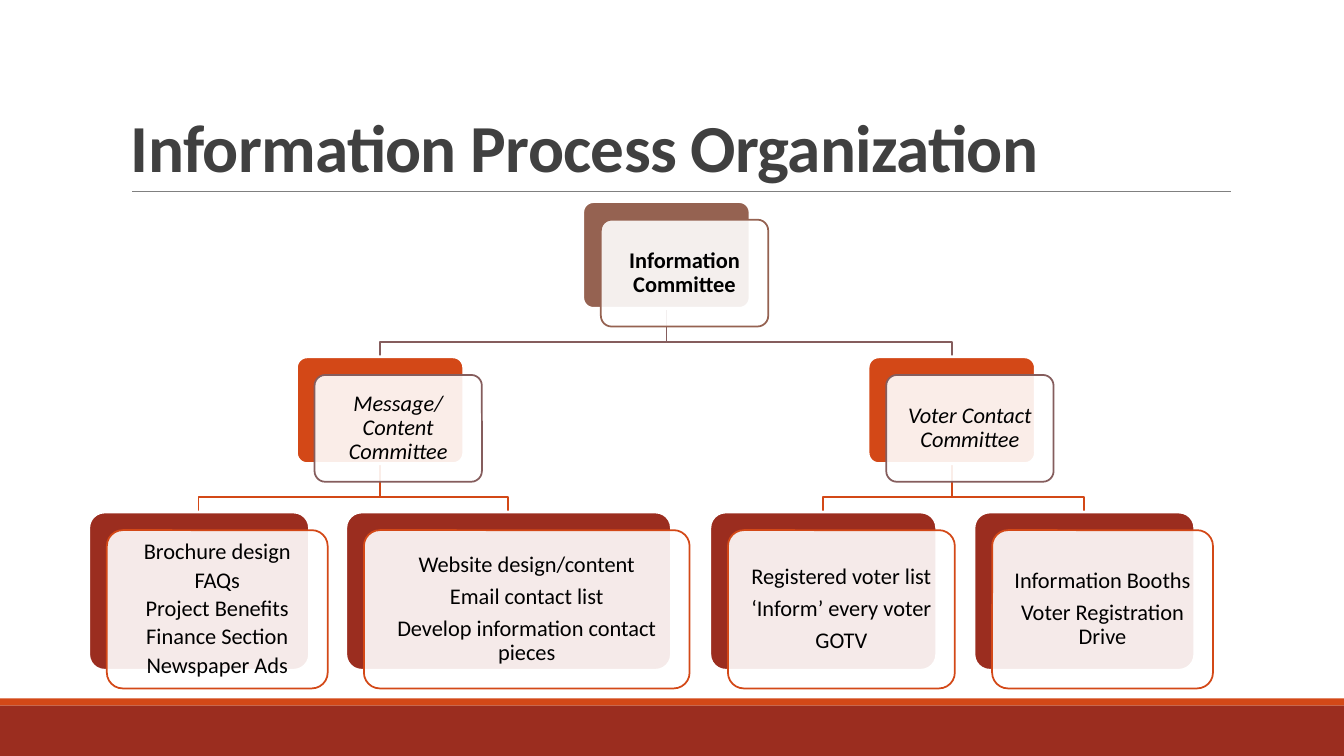
"""Builds the Information Process Organization chart slide."""
from lxml import etree
from pptx import Presentation, util as u
from pptx.dml.color import RGBColor
from pptx.enum import shapes, text
from pptx.oxml import ns

COLORS = {"title": "404040", "text": "000000", "white": "FFFFFF", "rule": "808080",
          "brown": "956251", "mauve": "855D5D", "orange": "D34817", "red": "9B2D1F"}
ROUND = shapes.MSO_SHAPE.ROUNDED_RECTANGLE


class OrgSlide:
    """Style and drawing methods for one slide, in hundredths of an inch."""
    SCALE = 9144
    FONT = "Calibri"
    OFFSET = 18
    BEND = 15

    def __init__(self, prs):
        self.s = prs.slides.add_slide(prs.slide_layouts[6])

    def px(self, *values):
        return [u.Emu(v * self.SCALE) for v in values]

    def color(self, name):
        return RGBColor.from_string(COLORS[name])

    def stroke(self, sp, color, width):
        sp.line.color.rgb = self.color(color)
        sp.line.width = u.Pt(width)

    def shape(self, kind, box, fill, line=None, width=1.25, alpha=None):
        sp = self.s.shapes.add_shape(kind, *self.px(*box))
        sp.shadow.inherit = False
        sp.fill.solid()
        sp.fill.fore_color.rgb = self.color(fill)
        if alpha:
            clr = sp.fill._xPr.find(".//" + ns.qn("a:srgbClr"))
            etree.SubElement(clr, ns.qn("a:alpha")).set("val", str(alpha * 1000))
        if line:
            self.stroke(sp, line, width)
        else:
            sp.line.fill.background()
        if kind == ROUND:
            sp.adjustments[0] = 0.1
        return sp

    def run(self, p, words, size, color, bold=False, italic=False):
        r = p.add_run()
        r.text = words
        r.font.name, r.font.size = self.FONT, u.Pt(size)
        r.font.bold, r.font.italic = bold, italic
        r.font.color.rgb = self.color(color)
        return r

    def title(self, words, box):
        tf = self.s.shapes.add_textbox(*self.px(*box)).text_frame
        tf.word_wrap = True
        tf.vertical_anchor = text.MSO_ANCHOR.BOTTOM
        p = tf.paragraphs[0]
        p.line_spacing = 0.85
        r = self.run(p, words, 48, "title", bold=True)
        r.font._element.set("spc", "-50")

    def rule(self, x1, x2, y):
        line = self.s.shapes.add_connector(shapes.MSO_CONNECTOR.STRAIGHT, *self.px(x1, y, x2, y))
        self.stroke(line, "rule", 0.5)
        etree.SubElement(line._element.spPr, ns.qn("a:effectLst"))

    def link(self, parent, child, color):
        x1, y1 = parent[0] + parent[2] // 2, parent[1] + parent[3]
        x2, y2 = child[0] + child[2] // 2, child[1]
        builder = self.s.shapes.build_freeform(x1, y1, scale=self.SCALE)
        bend = y2 - self.BEND
        builder.add_line_segments([(x1, bend), (x2, bend), (x2, y2)], close=False)
        sp = builder.convert_to_shape()
        sp.shadow.inherit = False
        sp.fill.background()
        self.stroke(sp, color, 1.25)

    def node(self, box, fill, line, lines, after=5.6, bold=False, italic=False):
        x, y, w, h = box
        self.shape(ROUND, box, fill, "white", 2)
        sp = self.shape(ROUND, (x + self.OFFSET, y + self.OFFSET, w, h), "white", line, alpha=90)
        tf = sp.text_frame
        tf.word_wrap = True
        tf.vertical_anchor = text.MSO_ANCHOR.MIDDLE
        tf.margin_left = tf.margin_right = tf.margin_top = tf.margin_bottom = self.px(7)[0]
        for i, words in enumerate(lines):
            p = tf.add_paragraph() if i else tf.paragraphs[0]
            p.alignment = text.PP_ALIGN.CENTER
            p.line_spacing = 0.9
            p.space_after = u.Pt(after)
            self.run(p, words, 16, "text", bold, italic)


def main():
    prs = Presentation()
    prs.slide_width, prs.slide_height = u.Inches(13.33), u.Inches(7.5)
    slide = OrgSlide(prs)
    slide.rule(131, 1221, 190)
    slide.title("Information Process Organization", (120, 31, 1100, 159))
    for top, height, fill in ((693, 7, "orange"), (700, 50, "red")):
        slide.shape(shapes.MSO_SHAPE.RECTANGLE, (0, top, 1333, height), fill)

    root = (578, 200, 166, 106)
    branches = [
        (294, "Message/ Content Committee", [
            (88, 219, 3, ["Brochure design", "FAQs", "Project Benefits",
                          "Finance Section", "Newspaper Ads"]),
            (343, 323, 5.6, ["Website design/content", "Email contact list",
                             "Develop information contact pieces"])]),
        (861, "Voter Contact Committee", [
            (704, 225, 5.6, ["Registered voter list", "‘Inform’ every voter", "GOTV"]),
            (966, 219, 5.6, ["Information Booths", "Voter Registration Drive"])]),
    ]
    for x, _, tasks in branches:
        committee = (x, 354, 166, 106)
        slide.link(root, committee, "mauve")
        for left, width, _, _ in tasks:
            slide.link(committee, (left, 508, width, 157), "orange")

    slide.node(root, "brown", "brown", ["Information Committee"], bold=True)
    for x, name, tasks in branches:
        slide.node((x, 354, 166, 106), "orange", "mauve", [name], italic=True)
        for left, width, after, lines in tasks:
            slide.node((left, 508, width, 157), "red", "orange", lines, after)
    prs.save("out.pptx")


if __name__ == "__main__":
    main()
